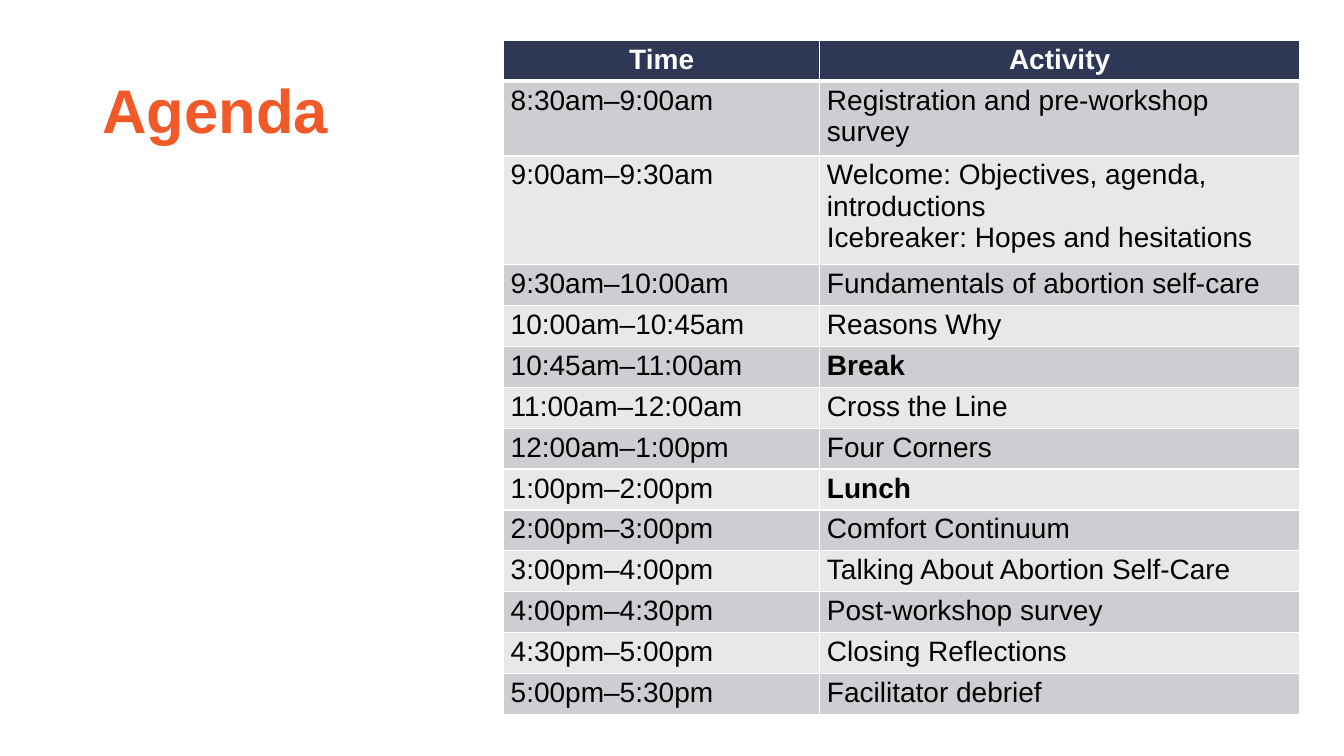
from lxml.etree import SubElement
from pptx import Presentation
from pptx.dml.color import RGBColor
from pptx.enum.text import MSO_ANCHOR, PP_ALIGN
from pptx.oxml.ns import qn
from pptx.util import Cm, Pt

WHITE, BLACK, NAVY, ORANGE = "FFFFFF", "000000", "2E3856", "F15928"
BANDS = ("CDCED1", "E8E8E9")
ROW = 1.03
TALL = {1: 1.88, 2: 2.74}
BREAKS = ("Break", "Lunch")
AGENDA = [
    ("Time", "Activity"),
    ("8:30am–9:00am", "Registration and pre-workshop survey"),
    ("9:00am–9:30am", "Welcome: Objectives, agenda, introductions\n"
                      "Icebreaker: Hopes and hesitations"),
    ("9:30am–10:00am", "Fundamentals of abortion self-care"),
    ("10:00am–10:45am", "Reasons Why"),
    ("10:45am–11:00am", "Break"),
    ("11:00am–12:00am", "Cross the Line"),
    ("12:00am–1:00pm", "Four Corners"),
    ("1:00pm–2:00pm", "Lunch"),
    ("2:00pm–3:00pm", "Comfort Continuum"),
    ("3:00pm–4:00pm", "Talking About Abortion Self-Care"),
    ("4:00pm–4:30pm", "Post-workshop survey"),
    ("4:30pm–5:00pm", "Closing Reflections"),
    ("5:00pm–5:30pm", "Facilitator debrief"),
]


def paint(target, color):
    target.rgb = RGBColor.from_string(color)


def apply(item, values):
    for name, value in values.items():
        setattr(item, name, value)


def write(frame, text, size, color, bold, align):
    frame.text = text
    for para in frame.paragraphs:
        para.alignment = align
        apply(para.font, {"name": "Arial", "size": Pt(size), "bold": bold})
        paint(para.font.color, color)


def border(cell, widths):
    """Draw white cell edges; widths maps L, R, T, B to points."""
    props = cell._tc.get_or_add_tcPr()
    for side, width in widths.items():
        line = SubElement(props, qn(f"a:ln{side}"), w=str(Pt(width)))
        fill = SubElement(line, qn("a:solidFill"))
        SubElement(fill, qn("a:srgbClr"), val=WHITE)


def add_title(slide):
    box = slide.shapes.add_textbox(Cm(2.33), Cm(1.01), Cm(22.28), Cm(3.68))
    frame = box.text_frame
    apply(frame, {"word_wrap": True, "vertical_anchor": MSO_ANCHOR.MIDDLE})
    write(frame, "Agenda", 44, ORANGE, True, PP_ALIGN.LEFT)
    frame.paragraphs[0].line_spacing = 0.9


def fill_cell(cell, text, row):
    head = row == 0
    border(cell, {"L": 1, "R": 1, "T": 3 if row == 1 else 1, "B": 3 if head else 1})
    cell.fill.solid()
    paint(cell.fill.fore_color, NAVY if head else BANDS[(row - 1) % 2])
    apply(cell, {"margin_left": Cm(0.18), "margin_right": Cm(0.18),
                 "margin_top": Cm(0.09), "margin_bottom": Cm(0.09)})
    write(cell.text_frame, text, 20, WHITE if head else BLACK,
          head or text in BREAKS, PP_ALIGN.CENTER if head else PP_ALIGN.LEFT)


def add_agenda(slide):
    sizes = [TALL.get(row, ROW) for row in range(len(AGENDA))]
    widths = (7.97, 12.09)
    table = slide.shapes.add_table(len(AGENDA), len(widths), Cm(12.69), Cm(1.02),
                                   Cm(sum(widths)), Cm(sum(sizes))).table
    table.horz_banding = False
    for column, width in zip(table.columns, widths):
        column.width = Cm(width)
    for row, (texts, size) in enumerate(zip(AGENDA, sizes)):
        table.rows[row].height = Cm(size)
        for col, text in enumerate(texts):
            fill_cell(table.cell(row, col), text, row)


def main():
    deck = Presentation()
    apply(deck, {"slide_width": Cm(33.87), "slide_height": Cm(19.05)})
    slide = deck.slides.add_slide(deck.slide_layouts[6])
    add_title(slide)
    add_agenda(slide)
    deck.save("out.pptx")


if __name__ == "__main__":
    main()
